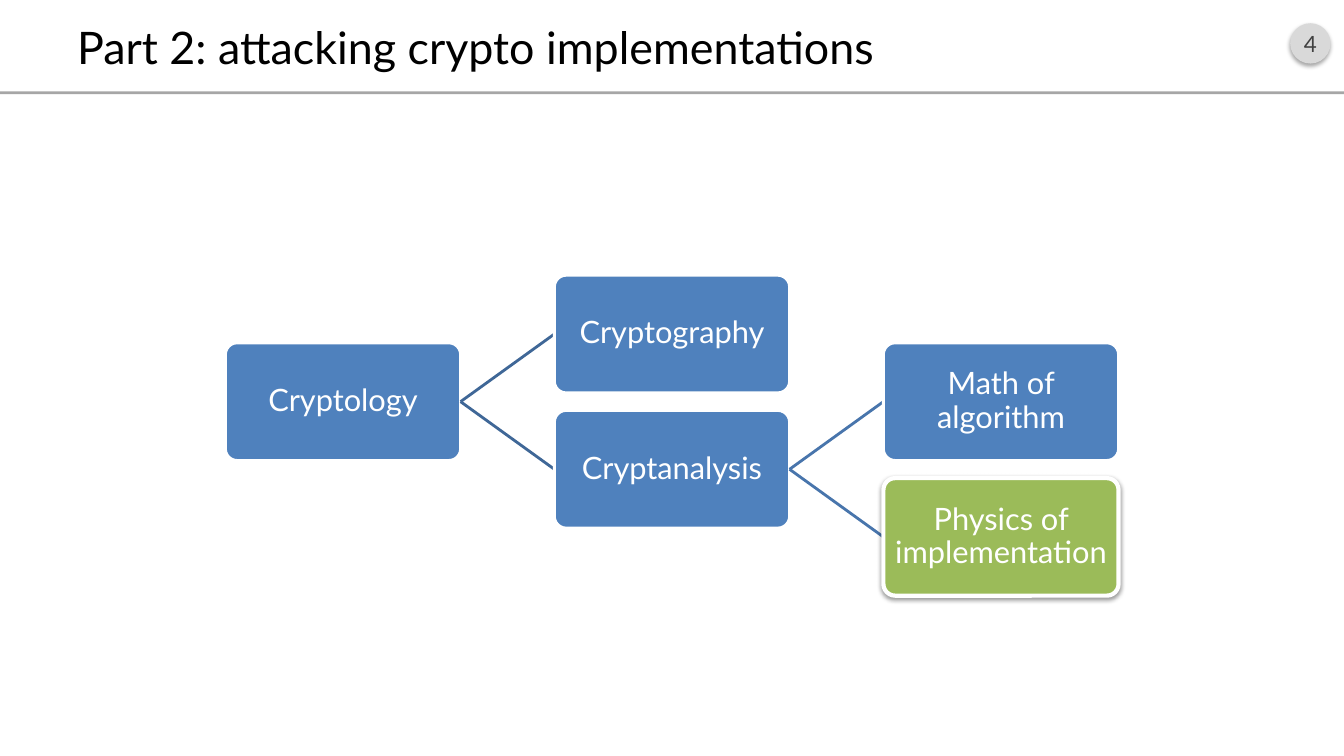
from lxml import etree
from pptx import Presentation
from pptx.dml.color import RGBColor
from pptx.enum.shapes import MSO_CONNECTOR as CONN, MSO_SHAPE as SHAPE
from pptx.enum.text import MSO_ANCHOR as ANCHOR, PP_ALIGN as ALIGN
from pptx.oxml.ns import qn
from pptx.util import Pt

# Content
TITLE = "Part 2: attacking crypto implementations"
PAGE = "4"
FONT = "Lato"
BLUE, GREEN, WHITE = "4F81BD", "9BBB59", "FFFFFF"
# name: (column, row in half steps, parent, fill)
TREE = {
    "Cryptology": (0, 1, None, BLUE),
    "Cryptography": (1, 0, "Cryptology", BLUE),
    "Cryptanalysis": (1, 2, "Cryptology", BLUE),
    "Math of algorithm": (2, 1, "Cryptanalysis", BLUE),
    "Physics of implementation": (2, 3, "Cryptanalysis", GREEN),
}
LINE_COLORS = {1: "3F6797", 2: "4875AC"}  # by column of the child

# Layout in points
LEFT, TOP = 161, 196.6
BOX_W, BOX_H = 168, 84
COL_STEP, ROW_STEP = 235, 48.3


def rgb(color):
    return RGBColor.from_string(color)


def add_box(kind, x, y, w, h, fill, line=None, line_w=0):
    sp = s.shapes.add_shape(kind, Pt(x), Pt(y), Pt(w), Pt(h))
    sp.shadow.inherit = False
    sp.fill.solid()
    sp.fill.fore_color.rgb = rgb(fill)
    if line:
        sp.line.color.rgb = rgb(line)
        sp.line.width = Pt(line_w)
    else:
        sp.line.fill.background()
    return sp


def write(sp, text, size, color, align, inset_x, inset_y):
    tf = sp.text_frame
    tf.text = text
    tf.word_wrap = True
    tf.vertical_anchor = ANCHOR.MIDDLE
    tf.margin_left = tf.margin_right = Pt(inset_x)
    tf.margin_top = tf.margin_bottom = Pt(inset_y)
    p = tf.paragraphs[0]
    p.alignment = align
    f = p.runs[0].font
    f.name, f.size, f.color.rgb = FONT, Pt(size), rgb(color)
    return p


def add_shadow(sp, alpha, blur, dist):
    effects = sp.element.spPr.find(qn("a:effectLst"))
    shadow = etree.SubElement(effects, qn("a:outerShdw"), blurRad=str(Pt(blur)),
                              dist=str(Pt(dist)), dir="5400000", rotWithShape="0")
    black = etree.SubElement(shadow, qn("a:srgbClr"), val="000000")
    etree.SubElement(black, qn("a:alpha"), val=str(alpha * 1000))


def link(parent, child, color):
    cx = s.shapes.add_connector(CONN.STRAIGHT, 0, 0, 0, 0)
    cx.begin_connect(parent, 3)
    cx.end_connect(child, 1)
    cx.line.color.rgb = rgb(color)
    cx.line.width = Pt(2)
    etree.SubElement(cx.element.spPr, qn("a:effectLst"))
    child.element.addprevious(cx.element)  # the child's border covers the line end


prs = Presentation()
prs.slide_width, prs.slide_height = Pt(960), Pt(540)
s = prs.slides.add_slide(prs.slide_layouts[6])

# Header: page number, rule, title
badge = add_box(SHAPE.OVAL, 921.6, 16.6, 28.8, 28.8, "D9D9D9")
add_shadow(badge, 35, 3.1, 1.8)
write(badge, PAGE, 16, "404040", ALIGN.CENTER, 0, 3.6)
add_box(SHAPE.RECTANGLE, 0, 65.3, 960, 2, "A6A6A6")
title = s.shapes.add_textbox(Pt(48), Pt(11.5), Pt(864), Pt(43.2))
write(title, TITLE, 32, "000000", ALIGN.LEFT, 7.2, 3.6)

# Tree
boxes = {}
for name, (col, row, parent, fill) in TREE.items():
    special = fill == GREEN
    box = add_box(SHAPE.ROUNDED_RECTANGLE, LEFT + col * COL_STEP, TOP + row * ROW_STEP,
                  BOX_W, BOX_H, fill, WHITE, 3 if special else 2)
    box.adjustments[0] = 0.1
    write(box, name, 22, WHITE, ALIGN.CENTER, 1.4, 1.4).line_spacing = 0.9
    if special:
        add_shadow(box, 38, 3.1, 1.6)
    if parent:
        link(boxes[parent], box, LINE_COLORS[col])
    boxes[name] = box

prs.save("out.pptx")
